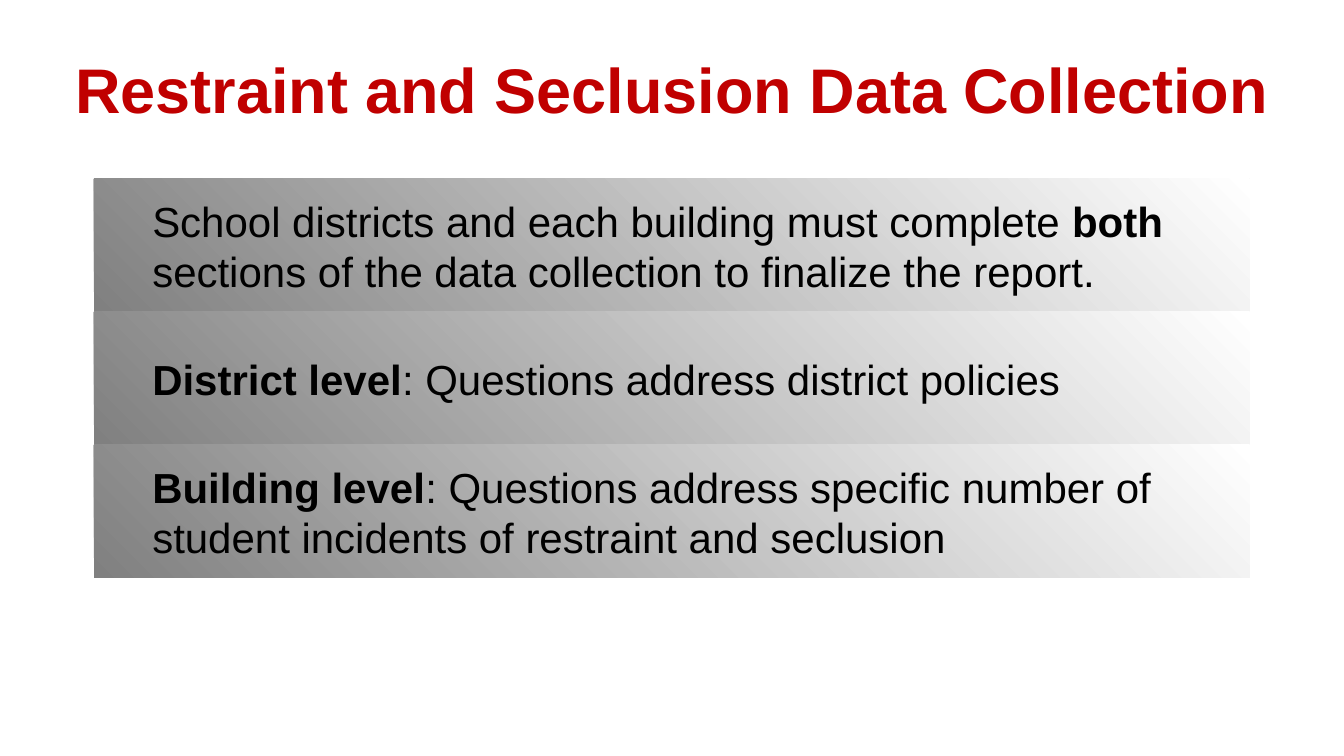
from dataclasses import dataclass

from pptx import Presentation
from pptx.dml.color import RGBColor
from pptx.enum.shapes import MSO_SHAPE
from pptx.enum.text import MSO_ANCHOR, PP_ALIGN
from pptx.slide import Slide
from pptx.util import Emu, Pt

COLORS = {"title": "C00000", "text": "000000", "dark": "808080", "light": "FFFFFF"}
FONT = "Arial"
BAND_LEFT, BAND_TOP, BAND_WIDTH, BAND_HEIGHT = 94, 179, 1156, 133
BAND_INDENT = 50


@dataclass
class Run:
    text: str
    bold: bool = False


@dataclass
class Band:
    runs: list[Run]


BANDS = [
    Band([
        Run("School districts and each building must complete "),
        Run("both", True),
        Run(" sections of the data collection to finalize the report."),
    ]),
    Band([
        Run("District level", True),
        Run(": Questions address district policies"),
    ]),
    Band([
        Run("Building level", True),
        Run(": Questions address specific number of student incidents "
            "of restraint and seclusion"),
    ]),
]


def px(n: int) -> Emu:
    return Emu(n * 914400 // 84)


def rgb(name: str) -> RGBColor:
    return RGBColor.from_string(COLORS[name])


def add_text(p, text: str, *, size: int, color: str = "text", bold: bool = False) -> None:
    r = p.add_run()
    r.text = text
    r.font.name = FONT
    r.font.size = Pt(size)
    r.font.bold = bold
    r.font.color.rgb = rgb(color)


def place(sp, left: int, top: int, width: int, height: int) -> None:
    sp.left, sp.top, sp.width, sp.height = map(px, (left, top, width, height))


def add_title(s: Slide, text: str) -> None:
    sp = s.shapes.title
    place(sp, 67, 50, 1210, 76)
    tf = sp.text_frame
    tf.margin_left = tf.margin_top = tf.margin_right = tf.margin_bottom = 0
    p = tf.paragraphs[0]
    p.alignment = PP_ALIGN.CENTER
    add_text(p, text, size=54, color="title", bold=True)


def add_band(s: Slide, band: Band, top: int) -> None:
    sp = s.shapes.add_shape(
        MSO_SHAPE.RECTANGLE, *map(px, (BAND_LEFT, top, BAND_WIDTH, BAND_HEIGHT)))
    sp.shadow.inherit = False
    sp.line.fill.background()
    sp.fill.gradient()
    sp.fill.gradient_angle = 45
    for stop, color in zip(sp.fill.gradient_stops, ("dark", "light")):
        stop.color.rgb = rgb(color)
    tf = sp.text_frame
    tf.word_wrap = True
    tf.vertical_anchor = MSO_ANCHOR.MIDDLE
    p = tf.paragraphs[0]
    p.level = 1
    p.alignment = PP_ALIGN.LEFT
    pPr = p._p.get_or_add_pPr()
    pPr.set("marL", str(px(BAND_INDENT)))
    pPr.set("indent", "0")
    for run in band.runs:
        add_text(p, run.text, size=36, bold=run.bold)


def main() -> None:
    prs = Presentation()
    prs.slide_width, prs.slide_height = px(1344), px(756)
    s = prs.slides.add_slide(prs.slide_layouts.get_by_name("Title Only"))
    add_title(s, "Restraint and Seclusion Data Collection")
    for i, band in enumerate(BANDS):
        add_band(s, band, BAND_TOP + i * BAND_HEIGHT)
    prs.save("out.pptx")


if __name__ == "__main__":
    main()
